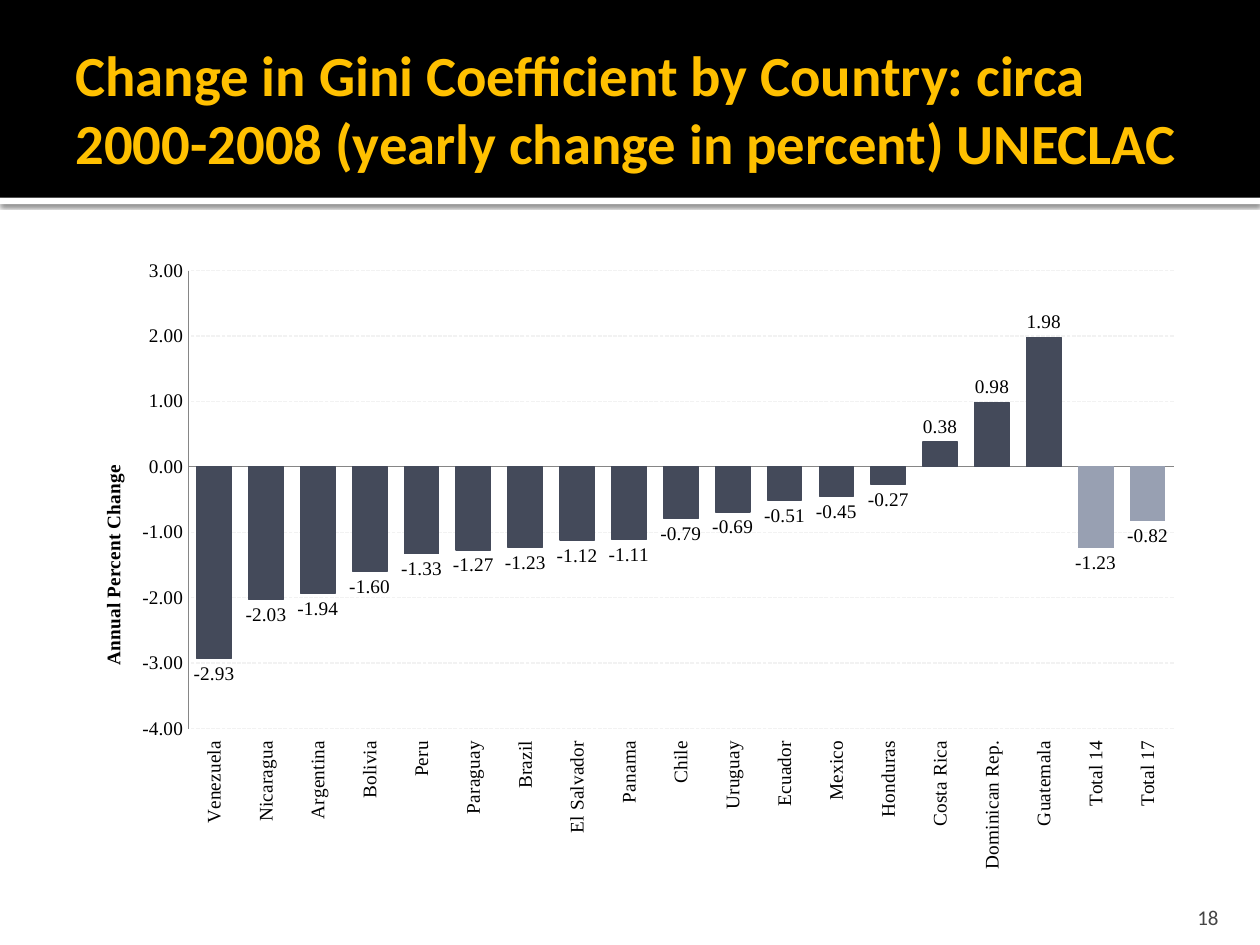
from lxml import etree
from pptx import Presentation
from pptx.chart.data import CategoryChartData
from pptx.dml.color import RGBColor
from pptx.enum.chart import XL_CHART_TYPE, XL_LABEL_POSITION, XL_TICK_LABEL_POSITION, XL_TICK_MARK
from pptx.enum.dml import MSO_LINE
from pptx.enum.shapes import MSO_SHAPE
from pptx.enum.text import MSO_ANCHOR, MSO_AUTO_SIZE, PP_ALIGN
from pptx.oxml import parse_xml
from pptx.oxml.ns import nsdecls
from pptx.util import Inches, Pt


def paint(format_part, color):
    """Give a fill or a line's fill one solid colour."""
    format_part.solid()
    format_part.fore_color.rgb = RGBColor.from_string(color)


def layout_xml(target, **fractions):
    """Build a manual chart layout from fractions of the chart area."""
    inner = '<c:layoutTarget val="inner"/>' if target else ""
    places = "".join(f'<c:{key} val="{value}"/>' for key, value in fractions.items())
    return parse_xml(
        f'<c:layout {nsdecls("c")}><c:manualLayout>{inner}<c:xMode val="edge"/>'
        f'<c:yMode val="edge"/>{places}</c:manualLayout></c:layout>')


presentation = Presentation()
presentation.slide_width = Inches(10)
presentation.slide_height = Inches(7.5)
slide = presentation.slides.add_slide(presentation.slide_layouts[5])

# Header band with a shadowed white rule below it
for top, height, color in [(1.57, 0.05, "FFFFFF"), (0, 1.57, "000000")]:
    band = slide.shapes.add_shape(
        MSO_SHAPE.RECTANGLE, 0, Inches(top), Inches(10), Inches(height))
    paint(band.fill, color)
    band.line.fill.background()
    band.shadow.inherit = False
    if color == "FFFFFF":
        effects = band.element.spPr.find(
            "{http://schemas.openxmlformats.org/drawingml/2006/main}effectLst")
        effects.append(etree.fromstring(
            f'<a:outerShdw {nsdecls("a")} blurRad="{Pt(2.5)}" dist="{Pt(0.8)}" '
            'dir="5400000" rotWithShape="0"><a:srgbClr val="000000">'
            '<a:alpha val="60000"/></a:srgbClr></a:outerShdw>'))

# Title, brought in front of the band
title = slide.shapes.title
title.element.getparent().append(title.element)
title.left, title.top, title.width, title.height = (
    Inches(0.5), Inches(0.17), Inches(9), Inches(1.37))
heading = title.text_frame
heading.text = ("Change in Gini Coefficient by Country: circa 2000-2008 "
                "(yearly change in percent) UNECLAC")
heading.word_wrap = True
heading.auto_size = MSO_AUTO_SIZE.NONE
heading.vertical_anchor = MSO_ANCHOR.MIDDLE
heading.margin_left = Inches(0.1)
heading.margin_right = heading.margin_top = heading.margin_bottom = Inches(0.05)
heading_line = heading.paragraphs[0]
heading_line.alignment = PP_ALIGN.LEFT
heading_line.font.name = "Calibri"
heading_line.font.size = Pt(32.4)
heading_line.font.bold = True
heading_line.font.color.rgb = RGBColor.from_string("FFC000")

# Page number
page_number = slide.shapes.add_textbox(
    Inches(8.97), Inches(7.08), Inches(0.8), Inches(0.3)).text_frame
page_number.text = "18"
page_number.word_wrap = True
page_number.vertical_anchor = MSO_ANCHOR.BOTTOM
page_number.margin_bottom = 0
number_line = page_number.paragraphs[0]
number_line.alignment = PP_ALIGN.RIGHT
number_line.font.name = "Calibri"
number_line.font.size = Pt(12)
number_line.font.color.rgb = RGBColor.from_string("454545")

# Yearly change of the Gini coefficient
gini_changes = {
    "Venezuela": -2.93, "Nicaragua": -2.03, "Argentina": -1.94, "Bolivia": -1.6,
    "Peru": -1.33, "Paraguay": -1.27, "Brazil": -1.23, "El Salvador": -1.12,
    "Panama": -1.11, "Chile": -0.79, "Uruguay": -0.69, "Ecuador": -0.51,
    "Mexico": -0.45, "Honduras": -0.27, "Costa Rica": 0.38,
    "Dominican Rep.": 0.98, "Guatemala": 1.98, "Total 14": -1.23, "Total 17": -0.82,
}
chart_data = CategoryChartData(number_format="0.00")
chart_data.categories = list(gini_changes)
chart_data.add_series("Series 1", list(gini_changes.values()))
chart = slide.shapes.add_chart(
    XL_CHART_TYPE.COLUMN_CLUSTERED, Inches(0.5), Inches(1.94),
    Inches(9), Inches(5.06), chart_data).chart
chart.has_legend = False
chart.has_title = False
chart.font.name = "Times New Roman"
chart.font.size = Pt(11)
chart.font.color.rgb = RGBColor.from_string("000000")

# Columns, with the totals in a lighter shade
plot = chart.plots[0]
plot.gap_width = 50
plot.vary_by_categories = False
changes = plot.series[0]
changes.invert_if_negative = False
paint(changes.format.fill, "444A5A")
paint(changes.format.line.fill, "444A5A")
changes.format.line.width = Pt(0.75)
for index, name in enumerate(gini_changes):
    if name.startswith("Total"):
        total = changes.points[index].format
        paint(total.fill, "98A0B2")
        paint(total.line.fill, "98A0B2")

# Value labels
plot.has_data_labels = True
labels = plot.data_labels
labels.show_value = True
labels.number_format = "0.00"
labels.number_format_is_linked = False
labels.position = XL_LABEL_POSITION.OUTSIDE_END

# Axes
countries, percent = chart.category_axis, chart.value_axis
for axis in (countries, percent):
    axis.major_tick_mark = axis.minor_tick_mark = XL_TICK_MARK.NONE
    paint(axis.format.line.fill, "868686")
    axis.format.line.width = Pt(0.75)
countries.tick_label_position = XL_TICK_LABEL_POSITION.LOW
countries.tick_labels.font.size = Pt(11)
percent.minimum_scale, percent.maximum_scale, percent.major_unit = -4, 3, 1
percent.tick_labels.number_format = "0.00"
percent.tick_labels.number_format_is_linked = False
gridlines = percent.major_gridlines.format.line
paint(gridlines.fill, "F2F2F2")
gridlines.width = Pt(0.75)
gridlines.dash_style = MSO_LINE.SQUARE_DOT
axis_title = percent.axis_title
axis_title.text_frame.text = "Annual Percent Change"
axis_title_font = axis_title.text_frame.paragraphs[0].font
axis_title_font.name = "Times New Roman"
axis_title_font.size = Pt(11)
axis_title_font.bold = True

# Upright country names
chart_namespace = "{http://schemas.openxmlformats.org/drawingml/2006/chart}"
plot_area = chart.element.find(f"{chart_namespace}chart/{chart_namespace}plotArea")
for label_body in plot_area.xpath("c:catAx/c:txPr/a:bodyPr"):
    label_body.set("rot", "-5400000")
    label_body.set("vert", "horz")

# Places of the plot and the axis title inside the chart
for parent, layout in [
    (plot_area, layout_xml(True, x=0.11, y=0.04, w=0.87, h=0.72)),
    (plot_area.xpath("c:valAx/c:title")[0], layout_xml(False, x=0.03, y=0.34)),
]:
    for automatic in parent.findall(chart_namespace + "layout"):
        parent.remove(automatic)
    text = parent.find(chart_namespace + "tx")
    parent.insert(0 if text is None else 1, layout)

# White plot and chart backgrounds
background = f'<a:solidFill {nsdecls("a")}><a:srgbClr val="FFFFFF"/></a:solidFill>'
plot_area.append(parse_xml(f'<c:spPr {nsdecls("c")}>{background}</c:spPr>'))
plot_area.getparent().addnext(parse_xml(
    f'<c:spPr {nsdecls("c", "a")}>{background}'
    f'<a:ln w="{Pt(0.75)}">{background}</a:ln></c:spPr>'))

presentation.save("out.pptx")
